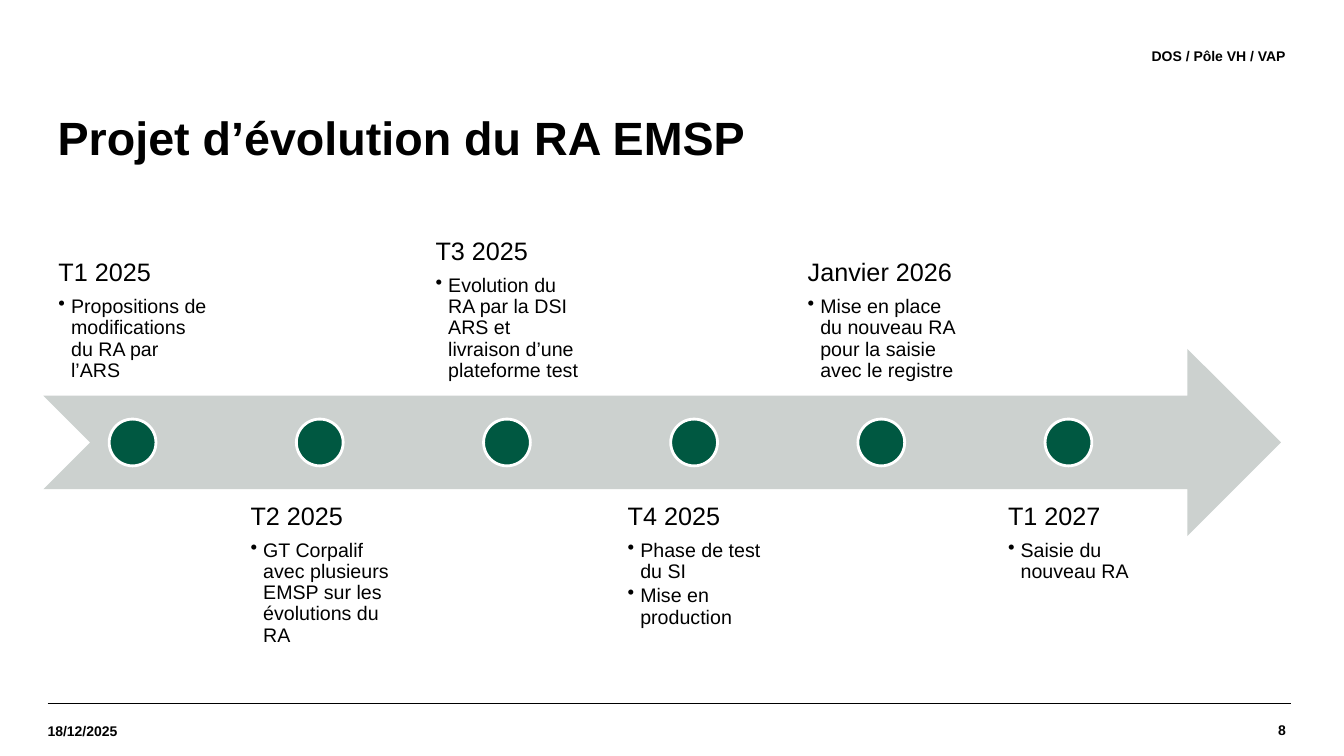
from lxml.etree import SubElement
from pptx import Presentation
from pptx.dml.color import RGBColor
from pptx.enum.shapes import MSO_CONNECTOR as Connector, MSO_SHAPE as Preset
from pptx.enum.text import MSO_ANCHOR as Anchor, PP_ALIGN as Align
from pptx.oxml.ns import qn
from pptx.util import Pt

BLACK = RGBColor(0x00, 0x00, 0x00)
WHITE = RGBColor(0xFF, 0xFF, 0xFF)
GREEN = RGBColor(0x00, 0x58, 0x41)
GREY = RGBColor(0xCC, 0xD1, 0xCF)
FONT = "Arial"

STAGES = [
    ("T1 2025", ["Propositions de modifications du RA par l’ARS"]),
    ("T2 2025", ["GT Corpalif avec plusieurs EMSP sur les évolutions du RA"]),
    ("T3 2025", ["Evolution du RA par la DSI ARS et livraison d’une plateforme test"]),
    ("T4 2025", ["Phase de test du SI", "Mise en production"]),
    ("Janvier 2026", ["Mise en place du nouveau RA pour la saisie avec le registre"]),
    ("T1 2027", ["Saisie du nouveau RA"]),
]


def add_frame(slide, box, anchor, inset=0):
    """Add a wrapping text box and return its text frame."""
    frame = slide.shapes.add_textbox(*map(Pt, box)).text_frame
    frame.word_wrap = True
    frame.vertical_anchor = anchor
    frame.margin_left = frame.margin_right = Pt(inset)
    frame.margin_top = frame.margin_bottom = Pt(inset)
    return frame


def write(paragraph, text, size, bold=False, align=Align.LEFT, spacing=1.0, after=0, bullet=False):
    """Write one formatted paragraph, bulleted on request."""
    paragraph.alignment = align
    paragraph.line_spacing = spacing
    paragraph.space_after = Pt(after)
    if bullet:
        paragraph.level = 1
        properties = paragraph._p.get_or_add_pPr()
        properties.set("marL", str(Pt(9)))
        properties.set("indent", str(Pt(-9)))
        SubElement(properties, qn("a:buChar")).set("char", "•")
    run = paragraph.add_run()
    run.text = text
    run.font.name = FONT
    run.font.size = Pt(size)
    run.font.bold = bold
    run.font.color.rgb = BLACK


def add_label(slide, box, text, size=10, inset=0, **text_format):
    """Add a bold, vertically centred single-line label."""
    frame = add_frame(slide, box, Anchor.MIDDLE, inset)
    write(frame.paragraphs[0], text, size, bold=True, **text_format)


def add_preset(slide, preset, box, fill):
    """Add a flat preset shape without outline."""
    shape = slide.shapes.add_shape(preset, *map(Pt, box))
    shape.shadow.inherit = False
    shape.fill.solid()
    shape.fill.fore_color.rgb = fill
    shape.line.fill.background()
    return shape


def add_header(slide, left, top, width):
    """Place the department label and the slide title."""
    add_label(slide, (left, top, width, 37.4), "DOS / Pôle VH / VAP", align=Align.RIGHT)
    add_label(slide, (left + 1.4, top + 51, width - 1.4, 57), "Projet d’évolution du RA EMSP",
              size=33.3, inset=7.2, spacing=0.9)


def add_footer(slide, left, top, width):
    """Place the rule, the date and the slide number."""
    rule = slide.shapes.add_connector(Connector.STRAIGHT, Pt(left), Pt(top), Pt(left + width + 4), Pt(top))
    rule.line.color.rgb = BLACK
    rule.line.width = Pt(0.8)
    SubElement(rule._element.spPr, qn("a:effectLst"))
    add_label(slide, (left, top + 1.5, 123, 36), "18/12/2025")
    add_label(slide, (left + width - 142, top, 142, 37.4), "8", align=Align.RIGHT)


def add_stage(slide, box, anchor, heading, tasks):
    """Place the heading and tasks of one stage, centred as a block."""
    frame = add_frame(slide, box, anchor, 10.1)
    frame._txBody.bodyPr.set("anchorCtr", "1")
    write(frame.paragraphs[0], heading, 18, spacing=0.9, after=7)
    for task in tasks:
        write(frame.add_paragraph(), task, 14, spacing=0.9, after=2.2, bullet=True)


def add_timeline(slide, left, top, width, height):
    """Place the arrow and its stages, alternately above and below."""
    add_preset(slide, Preset.NOTCHED_RIGHT_ARROW, (left, top, width, height), GREY)
    pitch, stage_width, dot = 133.7, 127.4, height / 4
    for index, (heading, tasks) in enumerate(STAGES):
        stage_left = left + index * pitch
        above = index % 2 == 0
        stage_top = top + height * (-0.75 if above else 0.75)
        add_stage(slide, (stage_left, stage_top, stage_width, height),
                  Anchor.BOTTOM if above else Anchor.TOP, heading, tasks)
        marker = add_preset(slide, Preset.OVAL, (stage_left + (stage_width - dot) / 2,
                                                 top + (height - dot) / 2, dot, dot), GREEN)
        marker.line.color.rgb = WHITE
        marker.line.width = Pt(2)


def main():
    """Build the slide and save the presentation."""
    presentation = Presentation()
    presentation.slide_width = Pt(960)
    presentation.slide_height = Pt(540)
    slide = presentation.slides.add_slide(presentation.slide_layouts[6])
    add_footer(slide, 34, 502.5, 884.5)
    add_header(slide, 32.7, 21, 885.5)
    add_timeline(slide, 31, 249.2, 884, 133.7)
    presentation.save("out.pptx")


if __name__ == "__main__":
    main()
